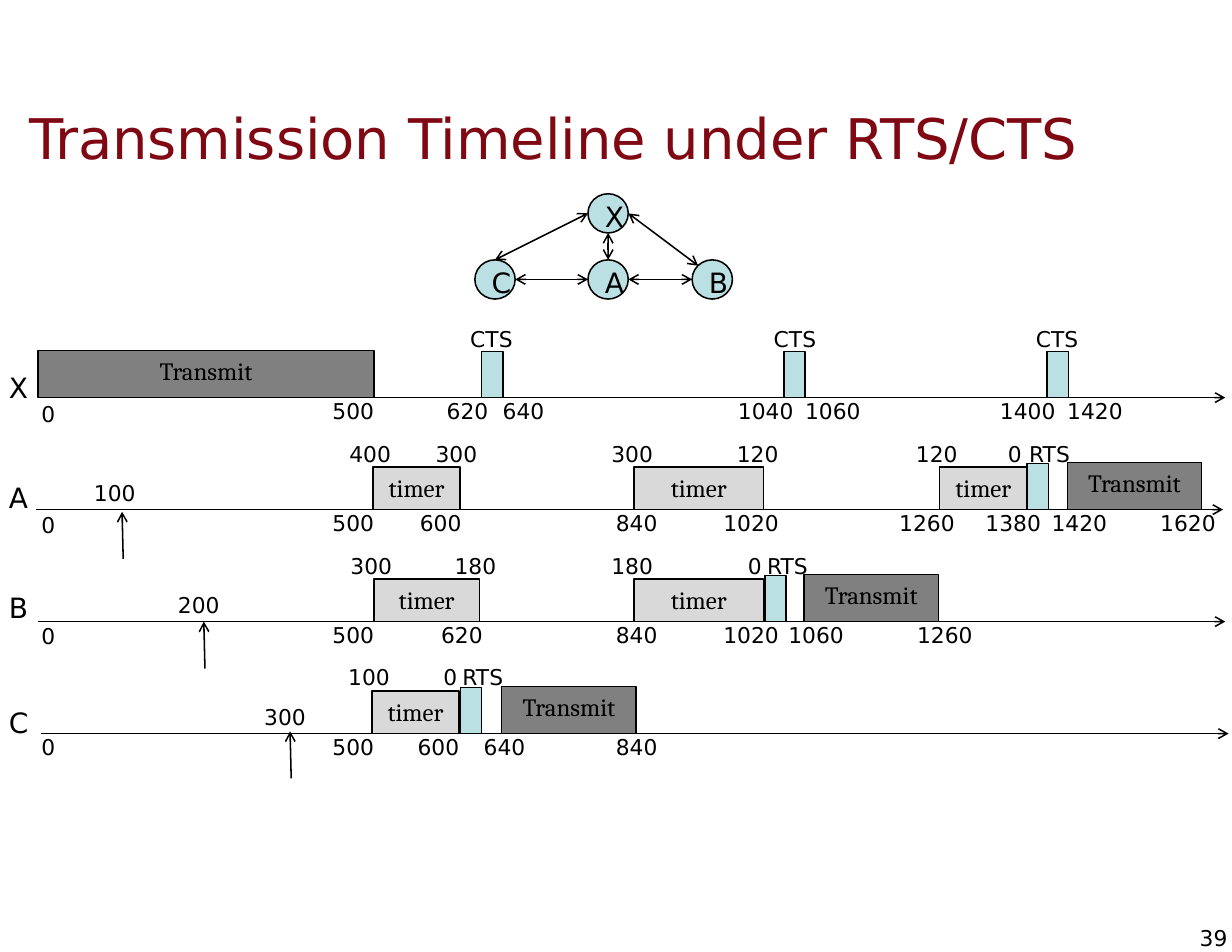
"""Draw four station timelines and their network under RTS/CTS."""
from dataclasses import dataclass

from lxml import etree
from pptx import Presentation
from pptx import util as u
from pptx.dml.color import RGBColor
from pptx.enum import shapes, text
from pptx.oxml import ns

COLS, ROWS = 11, 8.5
UNIT = u.Inches(1)
BLACK = RGBColor(0x00, 0x00, 0x00)
WINE = RGBColor(0x7F, 0x08, 0x13)
GREY = RGBColor(0x80, 0x80, 0x80)
PALE = RGBColor(0xD9, 0xD9, 0xD9)
AQUA = RGBColor(0xBB, 0xE0, 0xE3)
SANS, SERIF = "DejaVu Sans", "Cambria"
LEFT, MID, RIGHT = text.PP_ALIGN.LEFT, text.PP_ALIGN.CENTER, text.PP_ALIGN.RIGHT
TOP, CENTRE = text.MSO_ANCHOR.TOP, text.MSO_ANCHOR.MIDDLE
PAD = (0.1, 0.05, 0.1, 0.05)
AXIS, LONG = 3.55, 10.6
SEND, TIMER, PULSE = "Transmit", "timer", ""
KINDS = {SEND: (GREY, 0.42), TIMER: (PALE, 0.38), PULSE: (AQUA, 0.41)}
NODE_W, NODE_H = 0.36, 0.35


@dataclass
class Mark:
    """A number or word beside an axis."""
    col: float
    word: str


@dataclass
class Block:
    """A span of activity standing on an axis."""
    kind: str
    col: float
    wide: float


@dataclass
class Lane:
    """One station's timeline."""
    name: str
    row: float
    start: float
    rise: float
    blocks: list[Block]
    above: list[Mark]
    below: list[Mark]
    call: tuple[Mark, float] | None = None


@dataclass
class Node:
    """A station in the network."""
    name: str
    col: float
    row: float

    def side(self, x: float, y: float) -> tuple[float, float]:
        """Give a point at shares of the node's width and height."""
        return self.col + x * NODE_W, self.row + y * NODE_H


LANES = [
    Lane("X", 3.26, 0.34, 0.69,
         [Block(SEND, 0.34, 3), Block(PULSE, 4.3, 0.19),
          Block(PULSE, 7, 0.19), Block(PULSE, 9.35, 0.19)],
         [Mark(4.1, "CTS"), Mark(6.81, "CTS"), Mark(9.15, "CTS")],
         [Mark(3.89, "620"), Mark(4.39, "640"), Mark(6.49, "1040"),
          Mark(7.09, "1060"), Mark(8.83, "1400"), Mark(9.43, "1420")]),
    Lane("A", 4.24, 0.32, 0.66,
         [Block(TIMER, 3.33, 0.78), Block(TIMER, 5.66, 1.16),
          Block(TIMER, 8.39, 0.78), Block(PULSE, 9.17, 0.19),
          Block(SEND, 9.53, 1.2)],
         [Mark(3.02, "400"), Mark(3.79, "300"), Mark(5.36, "300"),
          Mark(6.48, "120"), Mark(8.08, "120"), Mark(8.9, "0"),
          Mark(9.09, "RTS")],
         [Mark(3.65, "600"), Mark(5.4, "840"), Mark(6.36, "1020"),
          Mark(7.93, "1260"), Mark(8.7, "1380"), Mark(9.29, "1420"),
          Mark(10.26, "1620")],
         (Mark(0.74, "100"), 1.09)),
    Lane("B", 5.22, 0.34, 0.66,
         [Block(TIMER, 3.34, 0.94), Block(TIMER, 5.66, 1.16),
          Block(PULSE, 6.83, 0.19), Block(SEND, 7.18, 1.2)],
         [Mark(3.03, "300"), Mark(3.96, "180"), Mark(5.36, "180"),
          Mark(6.58, "0"), Mark(6.75, "RTS")],
         [Mark(3.84, "620"), Mark(5.4, "840"), Mark(6.36, "1020"),
          Mark(6.94, "1060"), Mark(8.09, "1260")],
         (Mark(1.49, "200"), 1.82)),
    Lane("C", 6.25, 0.37, 0.67,
         [Block(TIMER, 3.32, 0.78), Block(PULSE, 4.11, 0.19),
          Block(SEND, 4.48, 1.2)],
         [Mark(3.01, "100"), Mark(3.86, "0"), Mark(4.03, "RTS")],
         [Mark(3.63, "600"), Mark(4.22, "640"), Mark(5.4, "840")],
         (Mark(2.26, "300"), 2.59)),
]


def span(*cells: float) -> list[int]:
    """Turn grid cells into lengths."""
    return [round(cell * UNIT) for cell in cells]


def write(shape, word: str, size: float, font: str = SANS, color=BLACK,
          align=LEFT, anchor=TOP, pad=PAD, wrap: bool = True) -> None:
    """Set one run of text in a shape."""
    frame = shape.text_frame
    frame.word_wrap, frame.vertical_anchor = wrap, anchor
    (frame.margin_left, frame.margin_top,
     frame.margin_right, frame.margin_bottom) = span(*pad)
    para = frame.paragraphs[0]
    para.alignment = align
    run = para.add_run()
    run.text = word
    run.font.name, run.font.size = font, u.Pt(size)
    run.font.color.rgb = color


def label(slide, col: float, row: float, word: str, size: float = 14,
          wide: float = 0.71, tall: float = 0.34, **style) -> None:
    """Add a text box."""
    box = slide.shapes.add_textbox(*span(col, row, wide, tall))
    write(box, word, size, **style)


def solid(slide, kind, cells: tuple, fill: RGBColor):
    """Add a filled shape with a black outline."""
    shape = slide.shapes.add_shape(kind, *span(*cells))
    shape.shadow.inherit = False
    shape.fill.solid()
    shape.fill.fore_color.rgb = fill
    shape.line.color.rgb, shape.line.width = BLACK, u.Pt(1)
    return shape


def arrow(slide, start: tuple, end: tuple, both: bool = False) -> None:
    """Add a straight line with open arrowheads."""
    line = slide.shapes.add_connector(
        shapes.MSO_CONNECTOR.STRAIGHT, *span(*start, *end))
    line.line.color.rgb, line.line.width = BLACK, u.Pt(1)
    pen = line.line._get_or_add_ln()
    for tip in ("a:headEnd", "a:tailEnd") if both else ("a:tailEnd",):
        etree.SubElement(pen, ns.qn(tip), type="arrow")
    etree.SubElement(line._element.spPr, ns.qn("a:effectLst"))


def draw_lane(slide, lane: Lane, turn: int) -> None:
    """Draw one timeline with its blocks and marks."""
    axis = AXIS + turn
    arrow(slide, (lane.start, axis), (lane.start + LONG, axis))
    label(slide, -0.02, lane.row, lane.name, 18, 0.29, 0.4)
    label(slide, 0.27, 3.53 + 0.99 * turn, "0", wide=0.29)
    for block in lane.blocks:
        fill, tall = KINDS[block.kind]
        cells = (block.col, axis - tall, block.wide, tall)
        shape = solid(slide, shapes.MSO_SHAPE.RECTANGLE, cells, fill)
        if block.kind:
            write(shape, block.kind, 16, SERIF, align=MID)
    for mark in lane.above:
        label(slide, mark.col, axis - lane.rise, mark.word)
    for mark in [Mark(2.87, "500"), *lane.below]:
        label(slide, mark.col, axis - 0.05, mark.word)
    if lane.call:
        mark, tip = lane.call
        label(slide, mark.col, axis - 0.32, mark.word)
        end = 4.57 + 0.98 * (turn - 1)
        arrow(slide, (tip + 0.01, end + 0.42), (tip, end))


def draw_net(slide) -> None:
    """Draw the four stations and their links."""
    x, a, b, c = nodes = [Node("X", 5.25, 1.73), Node("A", 5.25, 2.32),
                          Node("B", 6.18, 2.32), Node("C", 4.24, 2.32)]
    for node in nodes:
        cells = (node.col, node.row, NODE_W, NODE_H)
        shape = solid(slide, shapes.MSO_SHAPE.OVAL, cells, AQUA)
        write(shape, node.name, 18, align=MID, pad=(0.1, 0, 0.1, 0.05))
    west, east, north, south = (0, 0.5), (1, 0.5), (0.5, 0), (0.5, 1)
    for one, out, two, into in [(x, west, c, north), (x, south, a, north),
                                (x, east, b, (0.15, 0.15)),
                                (a, east, b, west), (c, east, a, west)]:
        arrow(slide, one.side(*out), two.side(*into), both=True)


def main() -> None:
    """Build and save the slide."""
    deck = Presentation()
    deck.slide_width, deck.slide_height = span(COLS, ROWS)
    slide = deck.slides.add_slide(deck.slide_layouts[6])
    label(slide, 0.15, 0.7, "Transmission Timeline under RTS/CTS", 36, 10.53, 1.04,
          color=WINE, anchor=CENTRE, pad=(0.11, 0.06, 0.11, 0.06))
    label(slide, 10.62, 8.25, "39", 14, 0.34, 0.24, align=RIGHT,
          anchor=CENTRE, pad=(0, 0, 0, 0), wrap=False)
    for turn, lane in enumerate(LANES):
        draw_lane(slide, lane, turn)
    draw_net(slide)
    deck.save("out.pptx")


if __name__ == "__main__":
    main()
